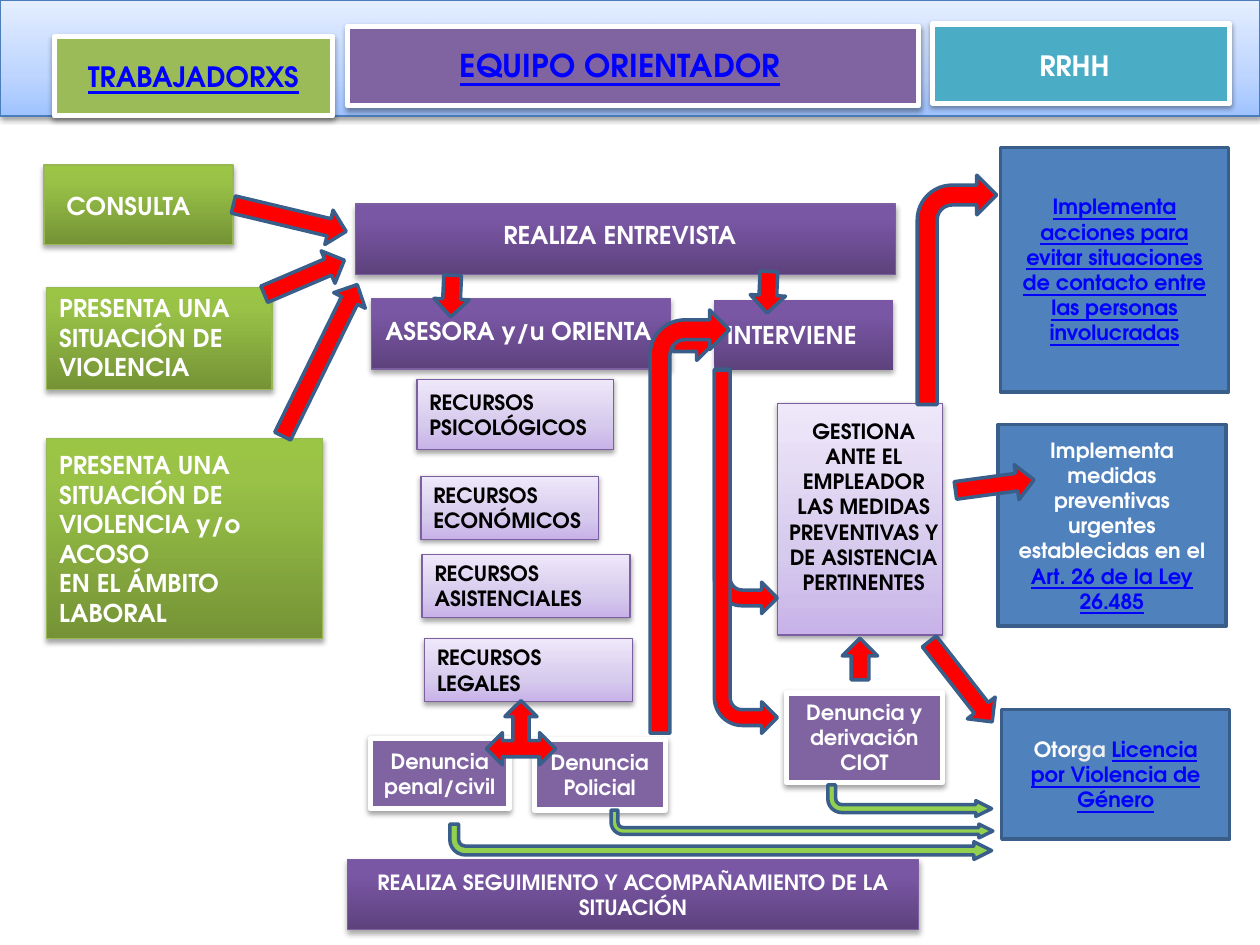
from pptx import Presentation
from pptx.dml.color import RGBColor
from pptx.enum import shapes as sh, text as tx
from pptx.oxml import ns, parse_xml
from pptx.util import Inches, Pt

HEX = {
    "white": "FFFFFF", "black": "000000", "link": "0000FF", "pale": "EFEFEF",
    "olive": "9BBB59", "plum": "8064A2", "teal": "4BACC6", "blue": "4F81BD",
    "navy": "395E89", "red": "FF0000", "lime": "92D050",
    "sky edge": "4A7DBA", "moss edge": "97B853", "grape edge": "7C5F9F",
}
GRADS = {
    "sky": [(0, "9FC3FF"), (35, "BDD5FF"), (100, "E4EEFF")],
    "moss": [(0, "759336"), (80, "99C247"), (100, "9BC545")],
    "grape": [(0, "5D427D"), (80, "7A57A5"), (100, "7A56A7")],
    "lilac": [(0, "C8B2E9"), (35, "D6CAED"), (100, "EFE8FA")],
}
SOFT, DEEP = (37, 1.6), (34, 1.8)
STYLES = {
    "sky": ("sky edge", 0.75, SOFT),
    "moss": ("moss edge", 0.75, DEEP),
    "grape": ("grape edge", 0.75, DEEP),
    "lilac": ("grape edge", 0.75, SOFT),
    "olive": ("white", 3, SOFT),
    "plum": ("white", 3, SOFT),
    "teal": ("white", 3, SOFT),
    "blue": ("navy", 2, None),
    "red": ("navy", 2, None),
    "lime": ("navy", 2, None),
}
ALIGN = {"l": tx.PP_ALIGN.LEFT, "c": tx.PP_ALIGN.CENTER}
ANCHOR = {"t": tx.MSO_ANCHOR.TOP, "m": tx.MSO_ANCHOR.MIDDLE}
KIND = sh.MSO_SHAPE
SPACE = 'xmlns:a="http://schemas.openxmlformats.org/drawingml/2006/main"'


def rgb(name):
    return RGBColor.from_string(HEX[name])


def frame(box, at):
    x, y, w, h = at
    return [Inches(v) for v in (box[0] + x, box[1] + y, w, h)]


def shade(shape, stops):
    shape.fill.gradient()
    grad = shape._element.spPr.find(ns.qn("a:gradFill"))
    rows = "".join(f'<a:gs pos="{pos * 1000}"><a:srgbClr val="{tone}"/></a:gs>'
                   for pos, tone in stops)
    grad.replace(grad.find(ns.qn("a:gsLst")), parse_xml(f"<a:gsLst {SPACE}>{rows}</a:gsLst>"))
    grad.find(ns.qn("a:lin")).set("ang", "16200000")


def cast(shape, alpha, dist):
    shape._element.spPr.find(ns.qn("a:effectLst")).append(parse_xml(
        f'<a:outerShdw {SPACE} blurRad="{Pt(3.1)}" dist="{Pt(dist)}" dir="5400000" '
        f'rotWithShape="0"><a:srgbClr val="000000"><a:alpha val="{alpha * 1000}"/>'
        '</a:srgbClr></a:outerShdw>'))


def draw(slide, box, at, style, kind=KIND.RECTANGLE, edged=True):
    shape = slide.shapes.add_shape(kind, *frame(box, at))
    edge, width, shadow = STYLES[style]
    if style in GRADS:
        shade(shape, GRADS[style])
    else:
        shape.fill.solid()
        shape.fill.fore_color.rgb = rgb(style)
    if edged:
        shape.line.color.rgb = rgb(edge)
        shape.line.width = Pt(width)
    else:
        shape.line.fill.background()
    shape.shadow.inherit = False
    if shadow:
        cast(shape, *shadow)
    return shape


def write(shape, paras, size=12, ink="white", align="c", anchor="m"):
    body = shape.text_frame
    body.word_wrap = True
    body.vertical_anchor = ANCHOR[anchor]
    for i, para in enumerate(paras):
        line = body.paragraphs[0] if i == 0 else body.add_paragraph()
        line.alignment = ALIGN[align]
        for part in [(para, ink)] if isinstance(para, str) else para:
            run = line.add_run()
            run.text, tone = part
            look = {"name": "TeX Gyre Adventor", "size": Pt(size), "bold": True,
                    "underline": tone == "link"}
            for key, val in look.items():
                setattr(run.font, key, val)
            run.font.color.rgb = rgb(tone)


def label(slide, box, at, words, **form):
    write(slide.shapes.add_textbox(*frame(box, at)), [words], anchor="t", **form)


def head(slide, box):
    draw(slide, box, (0, 0, box[2], box[3]), "sky")
    tab = draw(slide, box, (0.43, 0.29, 2.21, 0.63), "olive")
    write(tab, ["TRABAJADORXS"], 16, "link")
    draw(slide, box, (2.76, 0.21, 4.53, 0.63), "plum")
    draw(slide, box, (7.4, 0.19, 2.36, 0.63), "teal")
    label(slide, box, (3.19, 0.32, 3.46, 0.4), "EQUIPO ORIENTADOR", size=18, ink="link")
    label(slide, box, (8.15, 0.34, 0.87, 0.37), "RRHH", size=16, align="l")


def staff(slide, box):
    draw(slide, box, (0, 0, 1.5, 0.63), "moss")
    label(slide, box, (0.08, 0.16, 1.97, 0.34), "CONSULTA", size=14, align="l")
    cards = [
        ((0.02, 0.97, 1.79, 0.81), ["PRESENTA UNA SITUACIÓN DE VIOLENCIA"], "t"),
        ((0.02, 2.17, 2.19, 1.59), ["PRESENTA UNA SITUACIÓN DE VIOLENCIA y/o ACOSO",
                                    "EN EL ÁMBITO LABORAL"], "m"),
    ]
    for at, paras, anchor in cards:
        write(draw(slide, box, at, "moss"), paras, 14, align="l", anchor=anchor)


def team(slide, box):
    bars = [
        ((0.06, 0, 4.29, 0.56), (0.19, 0.08, 3.94, 0.34), "REALIZA ENTREVISTA", "c", True),
        ((0.19, 0.75, 2.37, 0.56), (0.2, 0.84, 3.94, 0.34), "ASESORA y/u ORIENTA", "l", True),
        ((2.91, 0.76, 1.42, 0.56), (2.91, 0.87, 1.41, 0.34), "INTERVIENE", "l", False),
    ]
    for at, spot, words, align, edged in bars:
        draw(slide, box, at, "grape", edged=edged)
        label(slide, box, spot, words, size=14, align=align)
    aids = [
        ((0.55, 1.39, 1.56, 0.56), ["RECURSOS", "PSICOLÓGICOS"], "m"),
        ((0.58, 2.16, 1.41, 0.5), ["RECURSOS ECONÓMICOS"], "t"),
        ((0.59, 2.78, 1.65, 0.5), ["RECURSOS ASISTENCIALES"], "t"),
        ((0.61, 3.45, 1.65, 0.5), ["RECURSOS LEGALES"], "t"),
    ]
    for at, paras, anchor in aids:
        write(draw(slide, box, at, "lilac"), paras, ink="black", align="l", anchor=anchor)
    draw(slide, box, (3.41, 1.58, 1.31, 1.84), "lilac")
    label(slide, box, (3.39, 1.65, 1.41, 1.72),
          "GESTIONA ANTE EL EMPLEADOR LAS MEDIDAS PREVENTIVAS Y DE ASISTENCIA PERTINENTES",
          ink="black")
    claims = [
        ((3.48, 3.88, 1.24, 0.71), "Denuncia y derivación CIOT", "t"),
        ((0.18, 4.24, 1.1, 0.56), "Denuncia penal/civil", "m"),
        ((1.48, 4.25, 1.04, 0.56), "Denuncia Policial", "m"),
    ]
    for at, words, anchor in claims:
        write(draw(slide, box, at, "plum"), [words], anchor=anchor)
    last = draw(slide, box, (0, 5.2, 4.53, 0.56), "grape")
    write(last, ["REALIZA SEGUIMIENTO Y ACOMPAÑAMIENTO DE LA SITUACIÓN"])


def hr(slide, box):
    cards = [
        ((0.02, 0, 1.81, 1.94), [("Implementa acciones para evitar situaciones de contacto "
                                  "entre las personas involucradas", "link")]),
        ((0, 2.2, 1.81, 1.6), [("Implementa medidas preventivas urgentes establecidas en el ",
                                "white"), ("Art. 26 de la Ley 26.485", "link")]),
        ((0.03, 4.46, 1.81, 1.03), [("Otor", "white"), ("ga ", "pale"),
                                    ("Licencia por Violencia de Género", "link")]),
    ]
    for at, para in cards:
        write(draw(slide, box, at, "blue"), [para])


def bend(slide, box, at, style="red", head=0.25, turn=True):
    arrow = draw(slide, box, at, style, KIND.BENT_ARROW)
    for i, val in enumerate((0.25, 0.25, head, 0.44)):
        arrow.adjustments[i] = val
    if turn:
        arrow.rotation = 180
        arrow._element.spPr.find(ns.qn("a:xfrm")).set("flipH", "1")


def flow(slide, box):
    darts = [
        (1.84, 1.59, 0.92, 13.4), (2.07, 2.06, 0.69, 336.9), (1.87, 2.72, 1.34, 296.2),
        (3.42, 2.21, 0.33, 92.6), (5.93, 2.18, 0.33, 92.6), (5.34, 2.58, 0.33, 0),
        (6.66, 5.09, 0.33, 270), (7.58, 3.71, 0.63, 352.3), (7.22, 5.27, 0.81, 52),
    ]
    for x, y, w, turn in darts:
        draw(slide, box, (x, y, w, 0.28), "red", KIND.RIGHT_ARROW).rotation = turn
    draw(slide, box, (3.86, 5.56, 0.55, 0.51), "red", KIND.LEFT_RIGHT_UP_ARROW)
    for at in ((5.16, 2.46, 0.63, 3.36), (7.28, 1.39, 0.63, 1.82)):
        bend(slide, box, at, turn=False)
    for at in ((5.67, 2.93, 0.5, 1.94), (5.67, 2.94, 0.5, 2.88)):
        bend(slide, box, at)
    for at in ((3.57, 6.54, 4.3, 0.28), (4.85, 6.43, 3.03, 0.22), (6.57, 6.23, 1.3, 0.25)):
        bend(slide, box, at, "lime", 0.5)


def main():
    deck = Presentation()
    deck.slide_width, deck.slide_height = Inches(10), Inches(7.5)
    slide = deck.slides.add_slide(deck.slide_layouts[6])
    head(slide, (0, 0, 10, 0.92))
    staff(slide, (0.35, 1.31))
    team(slide, (2.76, 1.62))
    hr(slide, (7.92, 1.17))
    flow(slide, (0, 0))
    deck.save("out.pptx")


if __name__ == "__main__":
    main()
